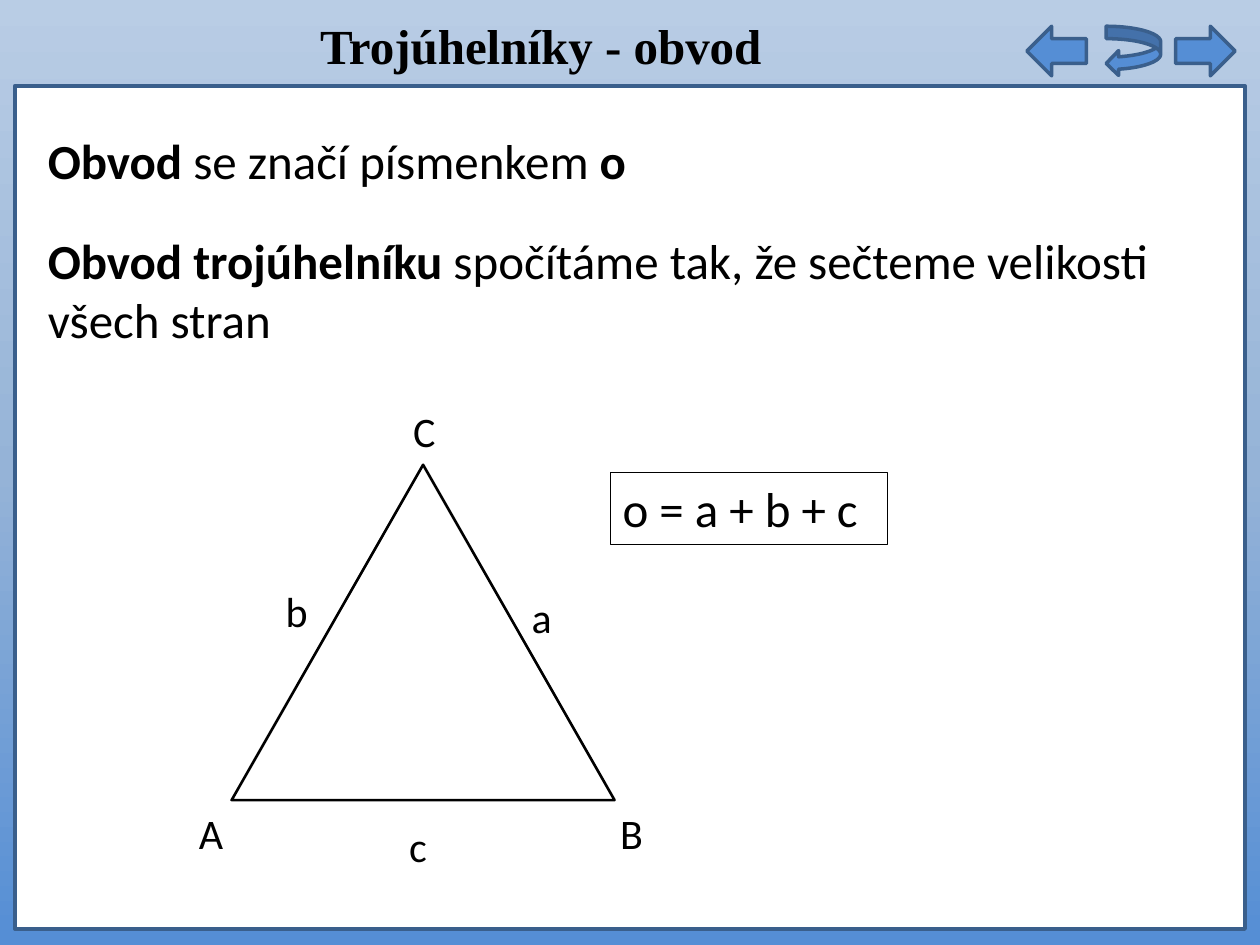
from copy import deepcopy
from dataclasses import dataclass

from lxml.etree import SubElement
from pptx import Presentation
from pptx.dml.color import RGBColor
from pptx.enum.shapes import MSO_SHAPE as Shape
from pptx.enum.text import MSO_ANCHOR as Anchor, MSO_AUTO_SIZE as AutoSize, PP_ALIGN as Align
from pptx.oxml.ns import qn
from pptx.util import Cm, Pt


@dataclass(frozen=True)
class Theme:
    sky: tuple = ("B9CDE5", "95B3D7", "558ED5")
    paper: str = "FFFFFF"
    arrow: str = "558ED5"
    frame: str = "3A5F8C"
    ink: str = "000000"
    heading_font: str = "Times New Roman"
    text_font: str = "Calibri"
    text_size: int = 28
    label_size: int = 24


theme = Theme()


def add_figure(kind, box, line, width, fill=None):
    shape = page.shapes.add_shape(kind, *map(Cm, box))
    shape.shadow.inherit = False
    if fill:
        shape.fill.solid()
        shape.fill.fore_color.rgb = RGBColor.from_string(fill)
    else:
        shape.fill.background()
    shape.line.color.rgb = RGBColor.from_string(line)
    shape.line.width = Pt(width)
    return shape


def format_span(span, size, bold=False, font=theme.text_font):
    span.font.name = font
    span.font.size = Pt(size)
    span.font.bold = bold
    span.font.color.rgb = RGBColor.from_string(theme.ink)


deck = Presentation()
deck.slide_width, deck.slide_height = Cm(25.4), Cm(19.05)
page = deck.slides.add_slide(deck.slide_layouts[3])

# Background: three colours from top to bottom
backdrop = page.background.fill
backdrop.gradient()
backdrop.gradient_angle = 270
stop_list = next(page.element.iter(qn("a:gsLst")))
stop_list.insert(1, deepcopy(stop_list[0]))
for number, (stop, colour) in enumerate(zip(backdrop.gradient_stops, theme.sky)):
    stop.position = number / 2
    stop.color.rgb = RGBColor.from_string(colour)

# White panel, placed behind the text
panel = add_figure(Shape.RECTANGLE, (0.3, 1.73, 24.8, 17), theme.frame, 2, theme.paper)
page.shapes.element.insert(2, panel.element)

# Navigation arrows
for kind, left, width in (
    (Shape.LEFT_ARROW, 20.7, 1.2),
    (Shape.CURVED_LEFT_ARROW, 22.3, 1.1),
    (Shape.RIGHT_ARROW, 23.7, 1.2),
):
    add_figure(kind, (left, 0.53, width, 1), theme.frame, 2, theme.arrow)

# Title
title = page.shapes.title
title.left, title.top, title.width, title.height = map(Cm, (0.08, -0.08, 21.64, 1.96))
title.text_frame.text = "Trojúhelníky - obvod"
title.text_frame.vertical_anchor = Anchor.MIDDLE
title.text_frame.paragraphs[0].alignment = Align.CENTER
format_span(title.text_frame.paragraphs[0].runs[0], theme.text_size, True, theme.heading_font)

# Rules about the perimeter: (text, bold) pieces
rules = (
    (1, 2.51, 1.45, (("Obvod ", True), ("se značí písmenkem ", False), ("o", True))),
    (2, 4.52, 2.64, (("Obvod trojúhelníku ", True),
                     ("spočítáme tak, že sečteme velikosti všech stran", False))),
)
for index, top, height, pieces in rules:
    body = page.placeholders[index]
    body.left, body.top, body.width, body.height = map(Cm, (0.71, top, 23.8, height))
    body.text_frame.auto_size = AutoSize.SHAPE_TO_FIT_TEXT
    para = body.text_frame.paragraphs[0]
    para.space_before = Pt(0)
    settings = para._p.get_or_add_pPr()
    settings.set("marL", "0")
    settings.set("indent", "0")
    SubElement(settings, qn("a:buNone"))
    for text, bold in pieces:
        span = para.add_run()
        span.text = text
        format_span(span, theme.text_size, bold)

# Triangle with its vertices and sides
add_figure(Shape.ISOSCELES_TRIANGLE, (4.67, 9.37, 7.72, 6.76), theme.ink, 1.5)
labels = {
    "A": (3.91, 16.03), "B": (12.4, 16.03), "C": (8.23, 7.92),
    "a": (10.62, 11.68), "b": (5.66, 11.56), "c": (8.15, 16.28),
}
for letter, (left, top) in labels.items():
    box = page.shapes.add_textbox(Cm(left), Cm(top), Cm(0.74), Cm(1.07))
    frame = box.text_frame
    frame.word_wrap = True
    frame.margin_left = frame.margin_right = frame.margin_top = frame.margin_bottom = Cm(0.1)
    frame.text = letter
    para = frame.paragraphs[0]
    para.line_spacing = 1.15
    para.space_after = Pt(10)
    format_span(para.runs[0], theme.label_size)

# Formula
formula = add_figure(Shape.RECTANGLE, (12.3, 9.53, 5.59, 1.45), theme.ink, 0.25)
formula.text_frame.text = "o = a + b + c"
formula.text_frame.vertical_anchor = Anchor.TOP
formula.text_frame.auto_size = AutoSize.SHAPE_TO_FIT_TEXT
formula.text_frame.paragraphs[0].alignment = Align.LEFT
format_span(formula.text_frame.paragraphs[0].runs[0], theme.text_size)

deck.save("out.pptx")
